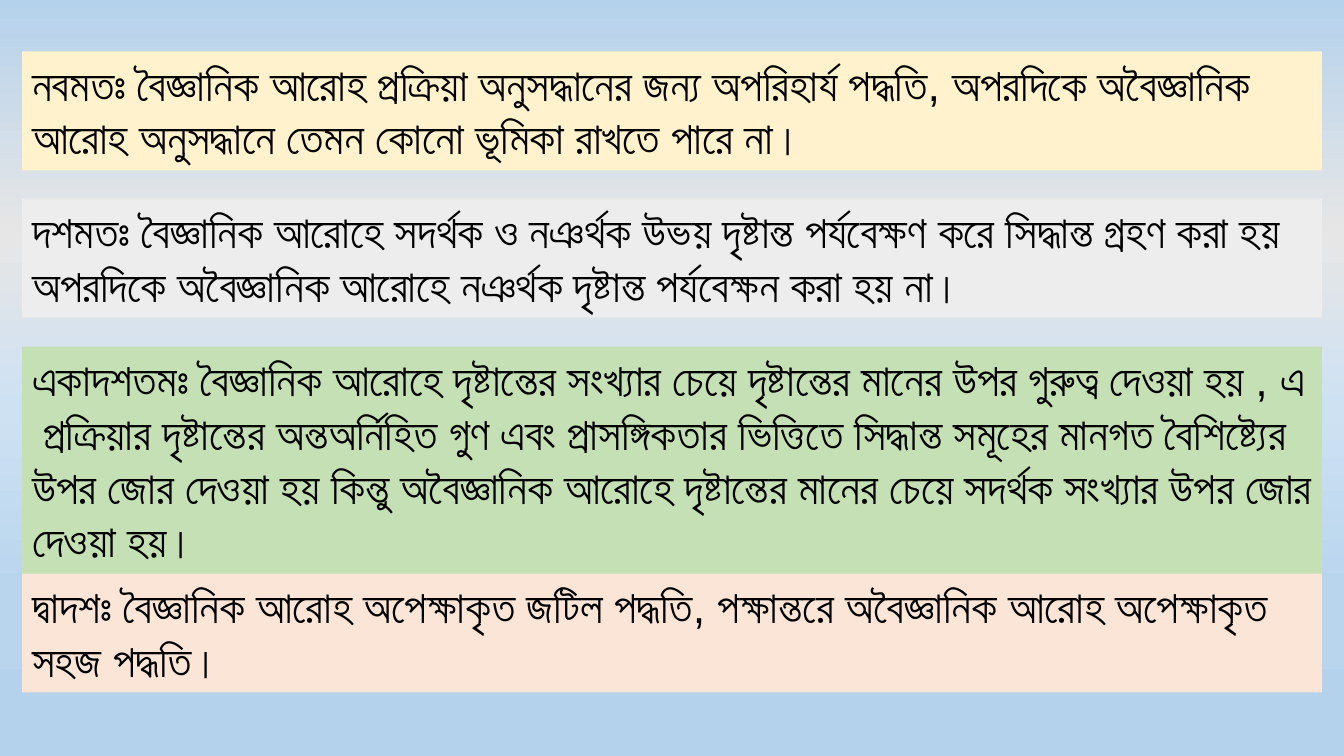
"""Build a slide of four coloured bands comparing scientific and unscientific induction."""
from dataclasses import dataclass

import pptx
import pptx.dml.color
import pptx.enum.shapes
import pptx.enum.text
import pptx.oxml
import pptx.oxml.ns
import pptx.slide
import pptx.util
from pptx.dml.color import RGBColor
from pptx.util import Inches

BLACK = RGBColor(0x00, 0x00, 0x00)
CREAM = RGBColor(0xFF, 0xF2, 0xCC)
GREY = RGBColor(0xED, 0xED, 0xED)
GREEN = RGBColor(0xC5, 0xE0, 0xB4)
PEACH = RGBColor(0xFB, 0xE5, 0xD6)
SKY = RGBColor(0xB5, 0xD2, 0xEC)
SILVER = RGBColor(0xE7, 0xE6, 0xE6)
PALE_BLUE = RGBColor(0xCE, 0xE1, 0xF2)
SOFT_BLUE = RGBColor(0xB9, 0xD5, 0xED)

BACKGROUND = [(0, SKY), (31, SILVER), (54, PALE_BLUE), (78, SOFT_BLUE), (99, SKY)]
BAND_LEFT, BAND_WIDTH = 0.22, 12.89
LINE_HEIGHT, PADDING = 0.54, 0.1
FONT = {"name": "Arial", "size": pptx.util.Pt(32)}
FRAME = {
    "word_wrap": True,
    "auto_size": pptx.enum.text.MSO_AUTO_SIZE.SHAPE_TO_FIT_TEXT,
    "vertical_anchor": pptx.enum.text.MSO_ANCHOR.TOP,
}


@dataclass
class Band:
    top: float
    lines: int
    fill: RGBColor
    text: str


BANDS = [
    Band(0.51, 2, CREAM,
         "নবমতঃ বৈজ্ঞানিক আরোহ প্রক্রিয়া অনুসদ্ধানের জন্য অপরিহার্য পদ্ধতি, "
         "অপরদিকে অবৈজ্ঞানিক আরোহ অনুসদ্ধানে তেমন কোনো ভূমিকা রাখতে পারে না।"),
    Band(1.97, 2, GREY,
         "দশমতঃ বৈজ্ঞানিক আরোহে সদর্থক ও নঞর্থক উভয় দৃষ্টান্ত পর্যবেক্ষণ করে সিদ্ধান্ত গ্রহণ করা হয় "
         "অপরদিকে অবৈজ্ঞানিক আরোহে নঞর্থক দৃষ্টান্ত পর্যবেক্ষন করা হয় না।"),
    Band(3.44, 4, GREEN,
         "একাদশতমঃ বৈজ্ঞানিক আরোহে দৃষ্টান্তের সংখ্যার চেয়ে দৃষ্টান্তের মানের উপর গুরুত্ব দেওয়া হয় , এ "
         " প্রক্রিয়ার দৃষ্টান্তের অন্তঅর্নিহিত গুণ এবং প্রাসঙ্গিকতার ভিত্তিতে সিদ্ধান্ত সমূহের মানগত বৈশিষ্ট্যের "
         "উপর জোর দেওয়া হয় কিন্তু অবৈজ্ঞানিক আরোহে দৃষ্টান্তের মানের চেয়ে সদর্থক সংখ্যার উপর জোর "
         "দেওয়া হয়।"),
    Band(5.69, 2, PEACH,
         "দ্বাদশঃ বৈজ্ঞানিক আরোহ অপেক্ষাকৃত জটিল পদ্ধতি, পক্ষান্তরে অবৈজ্ঞানিক আরোহ অপেক্ষাকৃত "
         "সহজ পদ্ধতি।"),
]


def paint_background(s: pptx.slide.Slide) -> None:
    fill = s.background.fill
    fill.gradient()
    fill.gradient_angle = 270
    stops = s.element.find(".//" + pptx.oxml.ns.qn("a:gsLst"))
    for stop in list(stops):
        stops.remove(stop)
    for percent, colour in BACKGROUND:
        stops.append(pptx.oxml.parse_xml(
            f'<a:gs {pptx.oxml.ns.nsdecls("a")} pos="{percent * 1000}">'
            f'<a:srgbClr val="{colour}"/></a:gs>'))


def add_band(s: pptx.slide.Slide, band: Band) -> None:
    sp = s.shapes.add_shape(
        pptx.enum.shapes.MSO_SHAPE.RECTANGLE, Inches(BAND_LEFT), Inches(band.top),
        Inches(BAND_WIDTH), Inches(PADDING + band.lines * LINE_HEIGHT))
    sp.shadow.inherit = False
    sp.fill.solid()
    sp.fill.fore_color.rgb = band.fill
    sp.line.fill.background()
    tf = sp.text_frame
    for key, value in FRAME.items():
        setattr(tf, key, value)
    p = tf.paragraphs[0]
    p.alignment = pptx.enum.text.PP_ALIGN.LEFT
    r = p.add_run()
    r.text = band.text
    for key, value in FONT.items():
        setattr(r.font, key, value)
    r.font.color.rgb = BLACK


def main() -> None:
    prs = pptx.Presentation()
    prs.slide_width, prs.slide_height = Inches(13.33), Inches(7.5)
    s = prs.slides.add_slide(prs.slide_layouts[6])
    paint_background(s)
    for band in BANDS:
        add_band(s, band)
    prs.save("out.pptx")


if __name__ == "__main__":
    main()
